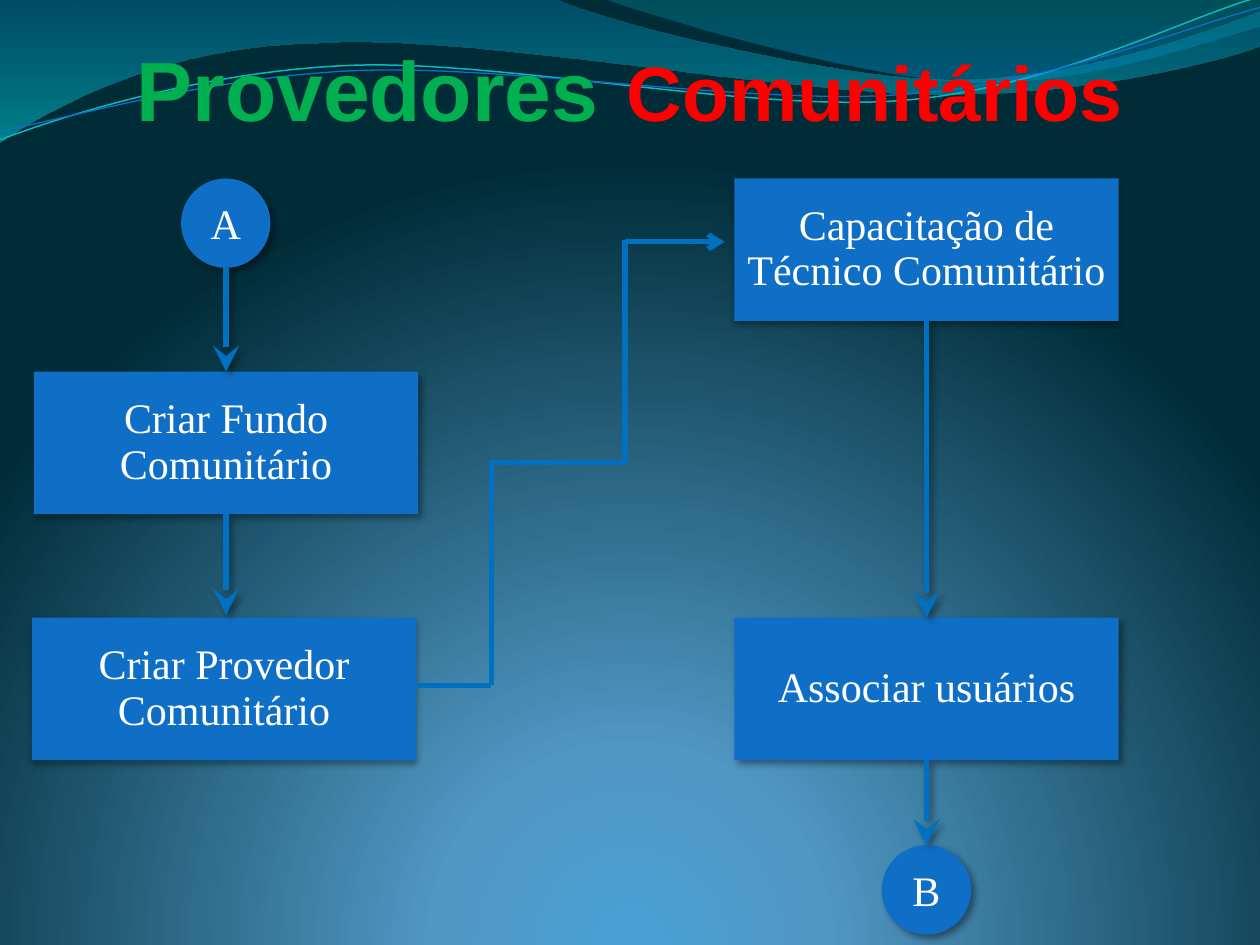
"""Builds the "Provedores Comunitários" flowchart slide."""
from lxml import etree
from pptx import Presentation
from pptx.dml.color import RGBColor
from pptx.enum.shapes import MSO_CONNECTOR, MSO_SHAPE
from pptx.enum.text import MSO_ANCHOR, MSO_AUTO_SIZE, PP_ALIGN
from pptx.oxml.ns import qn
from pptx.util import Pt

STRAIGHT, ELBOW = MSO_CONNECTOR.STRAIGHT, MSO_CONNECTOR.ELBOW
RECTANGLE, CIRCLE = MSO_SHAPE.RECTANGLE, MSO_SHAPE.FLOWCHART_CONNECTOR
CENTER, TOP, MIDDLE = PP_ALIGN.CENTER, MSO_ANCHOR.TOP, MSO_ANCHOR.MIDDLE

BLUE = RGBColor(0x0F, 0x6F, 0xC6)
ARROW_BLUE = RGBColor(0x00, 0x70, 0xC0)
TEAL = RGBColor(0x0A, 0xB8, 0xBF)
WHITE = RGBColor(0xFF, 0xFF, 0xFF)
GREEN = RGBColor(0x00, 0xB0, 0x50)
RED = RGBColor(0xFF, 0x00, 0x00)
BLACK = RGBColor(0x00, 0x00, 0x00)
BACKDROP = [
    (0, RGBColor(0x4A, 0xA0, 0xD6), 100),
    (25, RGBColor(0x50, 0x97, 0xC3), 100),
    (100, RGBColor(0x00, 0x2C, 0x38), 100),
]
LEFT_WAVE = [(0, RGBColor(0x00, 0x74, 0xA1), 45), (100, RGBColor(0x00, 0xC6, 0xCF), 55)]
RIGHT_WAVE = [(0, RGBColor(0x00, 0xA1, 0xA9), 30), (80, RGBColor(0x00, 0x8B, 0xBF), 45)]

DIAGONAL_SHADOW = (40, 4, 3, 45)
DOWN_SHADOW = (32, 3.5, 2.2, 90)


def set_stops(gradient, stops):
    """Replace the stops of a gradient with (position, colour, opacity) in percent."""
    stop_list = gradient.find(qn("a:gsLst"))
    stop_list.clear()
    for position, colour, opacity in stops:
        stop = etree.SubElement(stop_list, qn("a:gs"), pos=str(position * 1000))
        tint = etree.SubElement(stop, qn("a:srgbClr"), val=str(colour))
        etree.SubElement(tint, qn("a:alpha"), val=str(opacity * 1000))


def set_shadow(properties, shadow):
    """Give shape properties an outer shadow, or none at all."""
    effects = properties.find(qn("a:effectLst"))
    if effects is None:
        effects = etree.SubElement(properties, qn("a:effectLst"))
    if shadow:
        opacity, blur, distance, angle = shadow
        outer = etree.SubElement(
            effects, qn("a:outerShdw"), blurRad=str(Pt(blur)), dist=str(Pt(distance)),
            dir=str(angle * 60000), algn="ctr", rotWithShape="0")
        tint = etree.SubElement(outer, qn("a:srgbClr"), val=str(BLACK))
        etree.SubElement(tint, qn("a:alpha"), val=str(opacity * 1000))


deck = Presentation()
deck.slide_width, deck.slide_height = Pt(720), Pt(540)
slide = deck.slides.add_slide(deck.slide_layouts[5])
shapes = slide.shapes

slide.background.fill.gradient()
backdrop = slide.element.find(".//" + qn("a:gradFill"))
set_stops(backdrop, BACKDROP)
backdrop.remove(backdrop.find(qn("a:lin")))
glow = etree.SubElement(backdrop, qn("a:path"), path="circle")
etree.SubElement(glow, qn("a:fillToRect"), l="10000", t="180000", r="10000", b="50000")

waves = [
    (LEFT_WAVE, None, 0, (0, 0), [
        [(316.8, -0.7)],
        [(342.7, 12.2), (478.1, 45.4), (545.8, 45.4)],
        [(614.2, 45.4), (689.8, 18.7), (720, 6.5)],
        [(720.7, 25.9)],
        [(707.8, 31.7), (626.4, 54.7), (537.1, 54)],
        [(447.8, 54), (275, 20.2), (185, 24.5)],
        [(92.9, 25.9), (33.1, 59.8), (-0.7, 81.4)],
        [(0, 0)]]),
    (RIGHT_WAVE, None, 0, (344.9, -0.7), [
        [(366.5, 7.9), (491, 44.6), (553.7, 46.8)],
        [(616.3, 49.7), (691.9, 23), (720, 15.1)],
        [(720, 0)],
        [(344.9, -0.7)]]),
    (None, TEAL, 0.85, (-1.4, 62.9), [
        [(33.7, 51.6), (114, 29.4), (199.8, 29.9)],
        [(284.8, 30.3), (425.8, 67.2), (512.4, 64.8)],
        [(599, 62.4), (676.4, 25.7), (720.2, 15.5)]]),
    (None, BLUE, 0.75, (-1.2, 57.9), [
        [(32.9, 53.7), (118.3, 32.5), (204, 33)],
        [(290.5, 33.5), (428.9, 63.8), (515.5, 61.3)],
        [(601.4, 59.7), (678.5, 30.1), (721.4, 21.3)]]),
]
for stops, line_colour, line_width, start, segments in waves:
    builder = shapes.build_freeform(*map(Pt, start))
    anchors = [tuple(map(Pt, segment[-1])) for segment in segments]
    builder.add_line_segments(anchors, close=stops is not None)
    wave = builder.convert_to_shape()
    edges = wave.element.findall(".//" + qn("a:lnTo"))
    for edge, segment in zip(edges, segments):
        if len(segment) == 3:
            curve = etree.Element(qn("a:cubicBezTo"))
            for x, y in segment:
                etree.SubElement(curve, qn("a:pt"),
                                 x=str(Pt(x) - wave.left), y=str(Pt(y) - wave.top))
            edge.getparent().replace(edge, curve)
    wave.shadow.inherit = False
    if stops:
        wave.fill.gradient()
        wave.fill.gradient_angle = 270
        set_stops(wave.element.spPr.find(qn("a:gradFill")), stops)
        wave.line.fill.background()
    else:
        wave.rotation = 357.3
        wave.fill.background()
        wave.line.color.rgb = line_colour
        wave.line.width = Pt(line_width)

BOX_WIDTH, BOX_HEIGHT, DIAMETER = 219.6, 81.4, 51.1
ENTRY_AXIS, FUND_AXIS, PROVIDER_AXIS, RIGHT_AXIS = 129, 129.2, 128, 529.4
FIRST_ROW, SECOND_ROW, THIRD_ROW, LAST_ROW = 102, 212.4, 353, 483

steps = {}
for text, axis, top, preset, shadow in [
    ("Criar Provedor Comunitário", PROVIDER_AXIS, THIRD_ROW, RECTANGLE, DOWN_SHADOW),
    ("Capacitação de Técnico Comunitário", RIGHT_AXIS, FIRST_ROW, RECTANGLE, DOWN_SHADOW),
    ("Associar usuários", RIGHT_AXIS, THIRD_ROW, RECTANGLE, DIAGONAL_SHADOW),
    ("Criar Fundo Comunitário", FUND_AXIS, SECOND_ROW, RECTANGLE, DIAGONAL_SHADOW),
    ("A", ENTRY_AXIS, FIRST_ROW, CIRCLE, DIAGONAL_SHADOW),
    ("B", RIGHT_AXIS, LAST_ROW, CIRCLE, DIAGONAL_SHADOW),
]:
    boxed = preset == RECTANGLE
    width, height = (BOX_WIDTH, BOX_HEIGHT) if boxed else (DIAMETER, DIAMETER)
    step = shapes.add_shape(preset, Pt(axis - width / 2), Pt(top), Pt(width), Pt(height))
    step.fill.solid()
    step.fill.fore_color.rgb = BLUE
    step.line.fill.background()
    step.shadow.inherit = False
    set_shadow(step.element.spPr, shadow)
    frame = step.text_frame
    frame.word_wrap = True
    frame.vertical_anchor = MIDDLE
    frame.margin_left = frame.margin_right = Pt(7.2)
    frame.margin_top = frame.margin_bottom = Pt(7.2 if boxed else 3.6)
    paragraph = frame.paragraphs[0]
    paragraph.alignment = CENTER
    paragraph.line_spacing = 0.9 if boxed else 1.0
    label = paragraph.add_run()
    label.text = text
    label.font.name, label.font.size = "Times New Roman", Pt(24)
    label.font.color.rgb = WHITE
    steps[text] = step

provider, training, users, fund, _, exit_mark = steps.values()
ELBOW_TOP, ELBOW_BOTTOM, ARROW_LEVEL = 137.2, 391.7, 138.2
ELBOW_LEFT, ELBOW_RIGHT = 280.8, 357.1
run_length, offset = ELBOW_BOTTOM - ELBOW_TOP, ELBOW_RIGHT - ELBOW_LEFT
middle_x, middle_y = (ELBOW_LEFT + ELBOW_RIGHT) / 2, (ELBOW_TOP + ELBOW_BOTTOM) / 2
elbow_start = (middle_x - run_length / 2, middle_y - offset / 2)
elbow_end = (middle_x + run_length / 2, middle_y + offset / 2)
entry_bottom = (FUND_AXIS, FIRST_ROW + DIAMETER)
provider_entry = (FUND_AXIS, 351.4)
provider_exit = (238.3, ELBOW_BOTTOM)

for kind, begin, end, source, target, head, shadow in [
    (STRAIGHT, (0, 0), (0, 0), (users, 2), (exit_mark, 0), "stealth", DIAGONAL_SHADOW),
    (STRAIGHT, (0, 0), (0, 0), (training, 2), (users, 0), "stealth", DIAGONAL_SHADOW),
    (STRAIGHT, provider_entry, provider_entry, (fund, 2), None, "stealth", DIAGONAL_SHADOW),
    (STRAIGHT, entry_bottom, entry_bottom, None, (fund, 0), "stealth", DIAGONAL_SHADOW),
    (ELBOW, elbow_start, elbow_end, None, None, None, None),
    (STRAIGHT, (ELBOW_LEFT, ELBOW_BOTTOM), provider_exit, None, None, None, None),
    (STRAIGHT, (ELBOW_RIGHT, ARROW_LEVEL), (414, ARROW_LEVEL), None, None, "arrow", None),
]:
    link = shapes.add_connector(kind, *map(Pt, begin + end))
    if source:
        link.begin_connect(*source)
    if target:
        link.end_connect(*target)
    if kind == ELBOW:
        link.element.spPr.find(qn("a:xfrm")).set("rot", str(90 * 60000))
    link.line.color.rgb = ARROW_BLUE
    link.line.width = Pt(3)
    if head:
        size = "lg" if head == "stealth" else "med"
        etree.SubElement(link.element.spPr.find(qn("a:ln")), qn("a:tailEnd"),
                         type=head, w=size, len=size)
    set_shadow(link.element.spPr, shadow)

title = shapes.title
title.element.getparent().append(title.element)
title.left, title.top, title.width, title.height = Pt(0), Pt(0), Pt(720), Pt(87.1)
title.text_frame.word_wrap = True
title.text_frame.vertical_anchor = TOP
title.text_frame.auto_size = MSO_AUTO_SIZE.SHAPE_TO_FIT_TEXT
heading = title.text_frame.paragraphs[0]
heading.alignment = CENTER
for text, font_name, size, colour in [
    ("Provedores", "Arial", 48, GREEN),
    (" ", "Lato", 66, GREEN),
    ("Comunitários", "Arial", 44, RED),
]:
    word = heading.add_run()
    word.text = text
    word.font.name, word.font.size, word.font.bold = font_name, Pt(size), True
    word.font.color.rgb = colour

deck.save("out.pptx")
